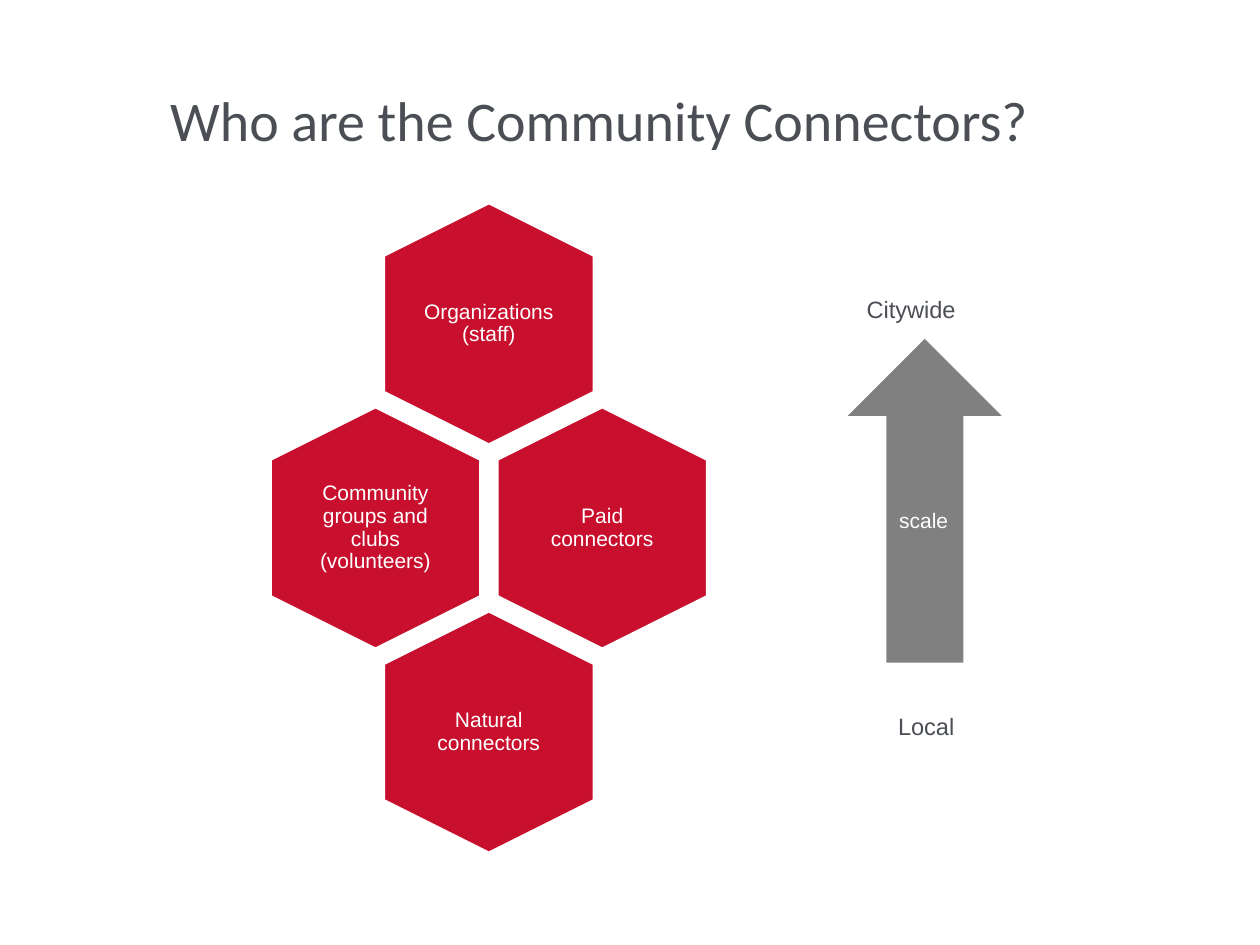
from dataclasses import dataclass

from pptx import Presentation
from pptx.dml.color import RGBColor
from pptx.enum.shapes import MSO_SHAPE
from pptx.enum.text import MSO_ANCHOR, PP_ALIGN
from pptx.shapes.autoshape import Shape
from pptx.slide import Slide
from pptx.text.text import TextFrame
from pptx.util import Inches, Pt

RED = RGBColor(0xC8, 0x10, 0x2E)
GRAY = RGBColor(0x80, 0x80, 0x80)
SLATE = RGBColor(0x4B, 0x4F, 0x55)
WHITE = RGBColor(0xFF, 0xFF, 0xFF)

HEXAGON_LENGTH, HEXAGON_BREADTH = 1.91, 1.66
LABEL_WIDTH, LABEL_HEIGHT = 1.14, 1.31
CENTER_X, TOP_Y = 3.88, 2.57
HALF_STEP_X, STEP_Y = 0.9, 1.62


@dataclass(frozen=True)
class Connector:
    lines: tuple[str, ...]
    column: int  # half steps from the middle of the cluster
    row: int
    inset: float = 0.05


@dataclass(frozen=True)
class ScaleLabel:
    text: str
    left: float
    top: float
    width: float


CONNECTORS = (
    Connector(("Organizations", "(staff)"), 0, 0),
    Connector(("Community groups and clubs", "(volunteers)"), -1, 1),
    Connector(("Paid connectors",), 1, 1, inset=0),
    Connector(("Natural connectors",), 0, 2),
)
SCALE_LABELS = (
    ScaleLabel("Local", 7.03, 5.6, 0.86),
    ScaleLabel("Citywide", 6.78, 2.29, 1.37),
)


def write(frame: TextFrame, lines: tuple[str, ...], size: float, color: RGBColor,
          align: PP_ALIGN = PP_ALIGN.LEFT, font: str = "Arial") -> None:
    """Fill the first paragraph, with line breaks between the lines."""
    frame.word_wrap = True
    para = frame.paragraphs[0]
    para.alignment = align
    for index, line in enumerate(lines):
        if index:
            para.add_line_break()
        span = para.add_run()
        span.text = line
        span.font.name = font
        span.font.size = Pt(size)
        span.font.color.rgb = color


def set_insets(frame: TextFrame, left: float, top: float, right: float, bottom: float) -> None:
    frame.margin_left, frame.margin_top = Inches(left), Inches(top)
    frame.margin_right, frame.margin_bottom = Inches(right), Inches(bottom)


def add_filled_shape(page: Slide, kind: MSO_SHAPE, left: float, top: float,
                     width: float, height: float, color: RGBColor) -> Shape:
    shape = page.shapes.add_shape(kind, Inches(left), Inches(top), Inches(width), Inches(height))
    shape.shadow.inherit = False
    shape.fill.solid()
    shape.fill.fore_color.rgb = color
    shape.line.fill.background()
    return shape


def add_connector_hexagon(page: Slide, connector: Connector) -> None:
    """Draw an upright hexagon, with its text in a box that is not rotated."""
    x = CENTER_X + connector.column * HALF_STEP_X
    y = TOP_Y + connector.row * STEP_Y
    hexagon = add_filled_shape(page, MSO_SHAPE.HEXAGON, x - HEXAGON_LENGTH / 2,
                               y - HEXAGON_BREADTH / 2, HEXAGON_LENGTH, HEXAGON_BREADTH, RED)
    hexagon.rotation = 90
    hexagon.adjustments[0] = 0.25
    hexagon.line.color.rgb = WHITE
    hexagon.line.width = Pt(1)

    box = page.shapes.add_textbox(Inches(x - LABEL_WIDTH / 2), Inches(y - LABEL_HEIGHT / 2),
                                  Inches(LABEL_WIDTH), Inches(LABEL_HEIGHT))
    frame = box.text_frame
    frame.vertical_anchor = MSO_ANCHOR.MIDDLE
    set_insets(frame, *[connector.inset] * 4)
    write(frame, connector.lines, 12, WHITE, PP_ALIGN.CENTER)
    frame.paragraphs[0].line_spacing = 0.9


def add_scale_arrow(page: Slide) -> None:
    arrow = add_filled_shape(page, MSO_SHAPE.UP_ARROW, 6.73, 2.69, 1.22, 2.57, GRAY)
    frame = arrow.text_frame
    frame.vertical_anchor = MSO_ANCHOR.MIDDLE
    set_insets(frame, 0.08, 0.05, 0.1, 0.05)
    write(frame, ("scale",), 12, WHITE, PP_ALIGN.CENTER)


def add_scale_label(page: Slide, label: ScaleLabel) -> None:
    box = page.shapes.add_textbox(Inches(label.left), Inches(label.top),
                                  Inches(label.width), Inches(0.33))
    write(box.text_frame, (label.text,), 13.5, SLATE)


def set_title(page: Slide, text: str) -> None:
    title = page.shapes.title
    title.left, title.top = Inches(1.25), Inches(0.63)
    title.width, title.height = Inches(8.1), Inches(0.64)
    title.text_frame.vertical_anchor = MSO_ANCHOR.TOP
    write(title.text_frame, (text,), 32, SLATE, font="Calibri")


def main() -> None:
    deck = Presentation()
    deck.slide_width, deck.slide_height = Inches(10), Inches(7.5)
    page = deck.slides.add_slide(deck.slide_layouts.get_by_name("Title Only"))
    set_title(page, "Who are the Community Connectors?")
    add_scale_arrow(page)
    for label in SCALE_LABELS:
        add_scale_label(page, label)
    for connector in CONNECTORS:
        add_connector_hexagon(page, connector)
    deck.save("out.pptx")


if __name__ == "__main__":
    main()
